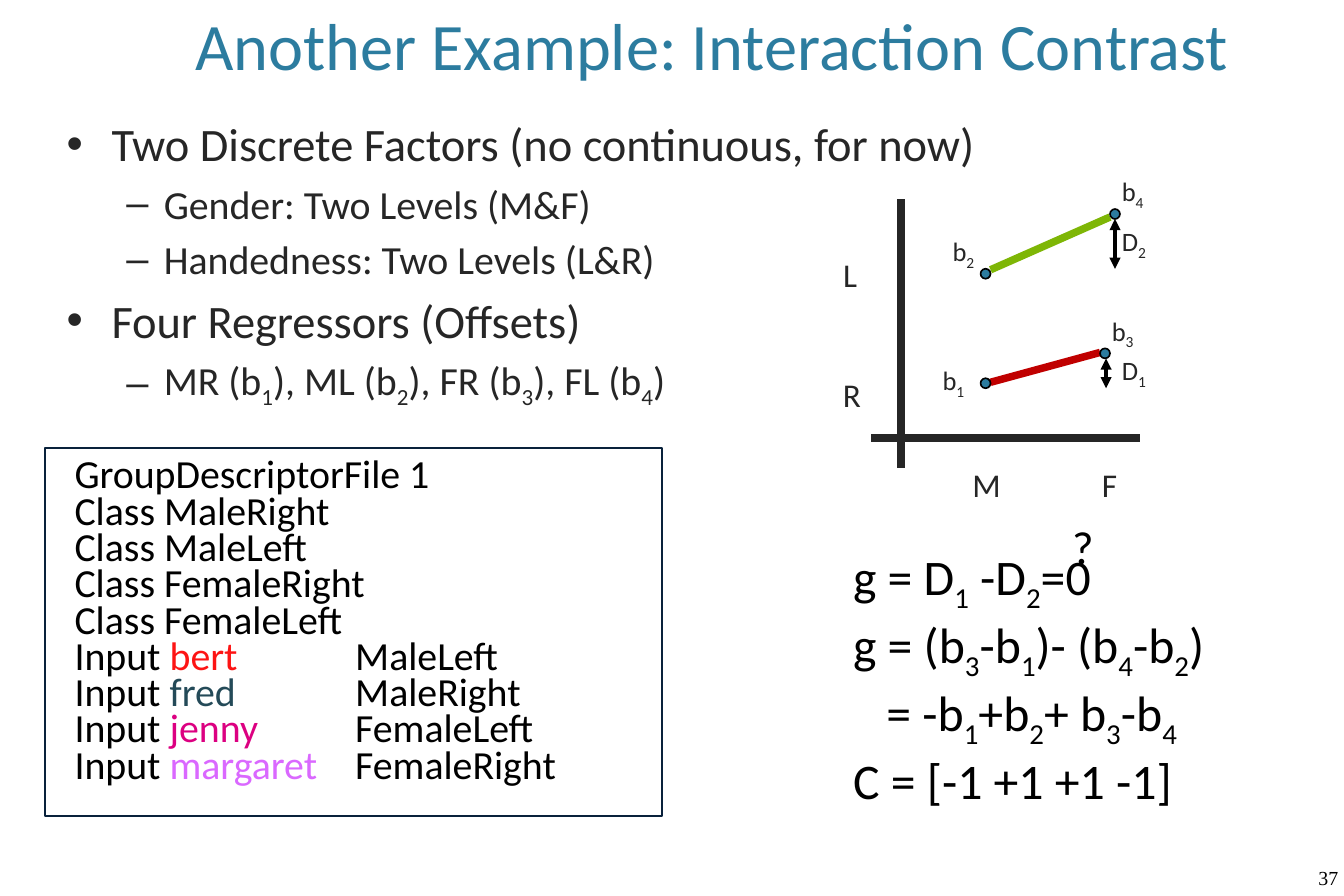
from dataclasses import dataclass

from lxml.etree import SubElement
from pptx import Presentation
from pptx.dml.color import RGBColor
from pptx.enum.shapes import MSO_CONNECTOR, MSO_SHAPE
from pptx.enum.text import MSO_ANCHOR, MSO_AUTO_SIZE, PP_ALIGN
from pptx.oxml.ns import qn
from pptx.util import Inches, Pt


@dataclass(frozen=True)
class Theme:
    font: str = "Calibri"
    number_font: str = "Times New Roman"
    title: str = "2C7C9F"
    ink: str = "262626"
    black: str = "000000"
    frame: str = "09213B"
    left_hand: str = "7EB606"
    right_hand: str = "C00000"
    title_size: int = 40
    equation_size: int = 30
    large: int = 28
    medium: int = 24
    axis_size: int = 20
    label_size: int = 16
    number_size: int = 12


THEME = Theme()

# Content: an underscore lowers the character after it
TITLE = "Another Example: Interaction Contrast"
BULLETS = [
    (0, "Two Discrete Factors (no continuous, for now)"),
    (1, "Gender: Two Levels (M&F)"),
    (1, "Handedness: Two Levels (L&R)"),
    (0, "Four Regressors (Offsets)"),
    (1, "MR (b_1), ML (b_2), FR (b_3), FL (b_4)"),
]
HEADER = "GroupDescriptorFile 1"
CLASSES = ["MaleRight", "MaleLeft", "FemaleRight", "FemaleLeft"]
INPUTS = [
    ("bert\t\t", "FD1414", "MaleLeft"),
    ("fred\t\t", "244A58", "MaleRight"),
    ("jenny\t\t", "DC0081", "FemaleLeft"),
    ("margaret\t", "DA68FF", "FemaleRight"),
]
EQUATIONS = [
    (0, "g = D_1 -D_2=0"),
    (0, "g = (b_3-b_1)- (b_4-b_2)"),
    (0.28, "= -b_1+b_2+ b_3-b_4"),
    (0, "C = [-1 +1 +1 -1]"),
]

# Positions in grid cells, twelve to the inch
CELL = Inches(1) / 12
COLUMNS, ROWS = 135, 90
LINES = [  # start, end, colour, width
    ((99.5, 27.1), (111.5, 21.8), THEME.left_hand, 4.5),
    ((90.5, 20), (90.5, 47), THEME.ink, 4.5),
    ((87.5, 44), (114.5, 44), THEME.ink, 4.5),
    ((99.5, 38.4), (110.5, 35.4), THEME.right_hand, 4.5),
]
DOTS = [(99, 38.5), (99, 27.5), (112, 21.5), (111, 35.5)]
DIFFERENCES = [((112, 22), (112, 27)), ((111.1, 36), (111.1, 39))]
AXIS_LABELS = [("M", 96.5, 46, 5.4), ("F", 109.5, 46, 4.4),
               ("R", 83.5, 37, 4.8), ("L", 83.5, 25, 4.4)]
POINT_LABELS = [("b_1", 93.5, 36), ("b_4", 111.5, 17), ("b_3", 110.5, 31),
                ("b_2", 94.5, 23), ("D_1", 111.5, 35), ("D_2", 111.5, 22)]


def cells(*counts):
    return [round(count * CELL) for count in counts]


def rgb(value):
    return RGBColor.from_string(value)


def add_span(para, text, size, color, font=THEME.font):
    span = para.add_run()
    span.text = text
    span.font.size = Pt(size)
    span.font.name = font
    span.font.color.rgb = rgb(color)
    return span


def add_formula(para, text, size, color):
    first, *rest = text.split("_")
    add_span(para, first, size, color)
    for piece in rest:
        lowered = add_span(para, piece[0], size, color)
        lowered.font._element.set("baseline", "-25000")
        if piece[1:]:
            add_span(para, piece[1:], size, color)


def paragraphs(frame, items):
    for index, item in enumerate(items):
        yield (frame.add_paragraph() if index else frame.paragraphs[0]), item


def add_label(shapes, text, place, size, color):
    box = shapes.add_textbox(*cells(*place))
    add_formula(box.text_frame.paragraphs[0], text, size, color)


def add_line(shapes, start, end, color, width, arrows=False):
    line = shapes.add_connector(MSO_CONNECTOR.STRAIGHT, *cells(*start, *end))
    line.line.color.rgb = rgb(color)
    line.line.width = Pt(width)
    if arrows:
        for tag in ("a:headEnd", "a:tailEnd"):
            SubElement(line.line._get_or_add_ln(), qn(tag), type="triangle")
    SubElement(line._element.spPr, qn("a:effectLst"))


def fill_placeholders(page):
    title, body = page.placeholders[0], page.placeholders[1]
    title.left, title.top, title.width, title.height = cells(8.5, 0, 126, 9)
    title.text_frame.vertical_anchor = MSO_ANCHOR.BOTTOM
    title.text_frame.auto_size = MSO_AUTO_SIZE.NONE
    para = title.text_frame.paragraphs[0]
    para.alignment = PP_ALIGN.CENTER
    add_span(para, TITLE, THEME.title_size, THEME.title)

    body.left, body.top, body.width, body.height = cells(5.5, 11, 111, 8)
    body.text_frame.auto_size = MSO_AUTO_SIZE.NONE
    for para, (level, text) in paragraphs(body.text_frame, BULLETS):
        para.level = level
        size = THEME.medium if level else THEME.large
        add_formula(para, text, size, THEME.ink)


def add_descriptor(page):
    box = page.shapes.add_shape(MSO_SHAPE.RECTANGLE, *cells(4.5, 45, 62, 37))
    box.shadow.inherit = False
    box.fill.background()
    box.line.color.rgb = rgb(THEME.frame)
    box.line.width = Pt(1)
    frame = box.text_frame
    frame.word_wrap = True
    frame.vertical_anchor = MSO_ANCHOR.TOP
    frame.margin_top = frame.margin_bottom = Inches(0.15)
    rows = [[(HEADER, THEME.black)]]
    rows += [[(f"Class {name}", THEME.black)] for name in CLASSES]
    rows += [[("Input ", THEME.black), (subject, color), (group, THEME.black)]
             for subject, color, group in INPUTS]
    for para, row in paragraphs(frame, rows):
        para.alignment = PP_ALIGN.LEFT
        para.line_spacing = 0.6
        para.space_before = Pt(4.6)
        settings = para._p.get_or_add_pPr()
        settings.set("marL", "0")
        settings.set("indent", str(Inches(0.15)))
        stops = SubElement(settings, qn("a:tabLst"))
        for stop in (2.37, 3.37):
            SubElement(stops, qn("a:tab"), pos=str(Inches(stop)), algn="l")
        for text, color in row:
            add_span(para, text, THEME.medium, color)


def add_plot(page):
    shapes = page.shapes.add_group_shape().shapes
    for line in LINES:
        add_line(shapes, *line)
    for column, row in DOTS:
        dot = shapes.add_shape(MSO_SHAPE.OVAL, *cells(column - 0.5, row - 0.5, 1, 1))
        dot.shadow.inherit = False
        dot.fill.solid()
        dot.fill.fore_color.rgb = rgb(THEME.title)
        dot.line.color.rgb = rgb(THEME.black)
        dot.line.width = Pt(1)
    for start, end in DIFFERENCES:
        add_line(shapes, start, end, THEME.black, 2.25, arrows=True)
    for text, column, row, width in AXIS_LABELS:
        add_label(shapes, text, (column, row, width, 5.2), THEME.axis_size, THEME.ink)
    for text, column, row in POINT_LABELS:
        add_label(shapes, text, (column, row, 5.3, 4.4), THEME.label_size, THEME.ink)


def add_equations(page):
    box = page.shapes.add_textbox(*cells(84.5, 54.25, 50, 29.75))
    box.text_frame.word_wrap = True
    for para, (indent, text) in paragraphs(box.text_frame, EQUATIONS):
        para._p.get_or_add_pPr().set("marL", str(Inches(indent)))
        add_formula(para, text, THEME.equation_size, THEME.black)
    add_label(page.shapes, "?", (106.5, 51.4, 4.4, 6.8), THEME.large, THEME.black)


def add_page_number(page):
    box = page.shapes.add_textbox(*cells(131.25, 86.4, 3.75, 3.6))
    box.text_frame.margin_right = 0
    add_span(box.text_frame.paragraphs[0], "37", THEME.number_size,
             THEME.black, THEME.number_font)


def main():
    deck = Presentation()
    deck.slide_width, deck.slide_height = cells(COLUMNS, ROWS)
    page = deck.slides.add_slide(deck.slide_layouts[1])
    for build in (fill_placeholders, add_descriptor, add_plot,
                  add_equations, add_page_number):
        build(page)
    deck.save("out.pptx")


if __name__ == "__main__":
    main()
